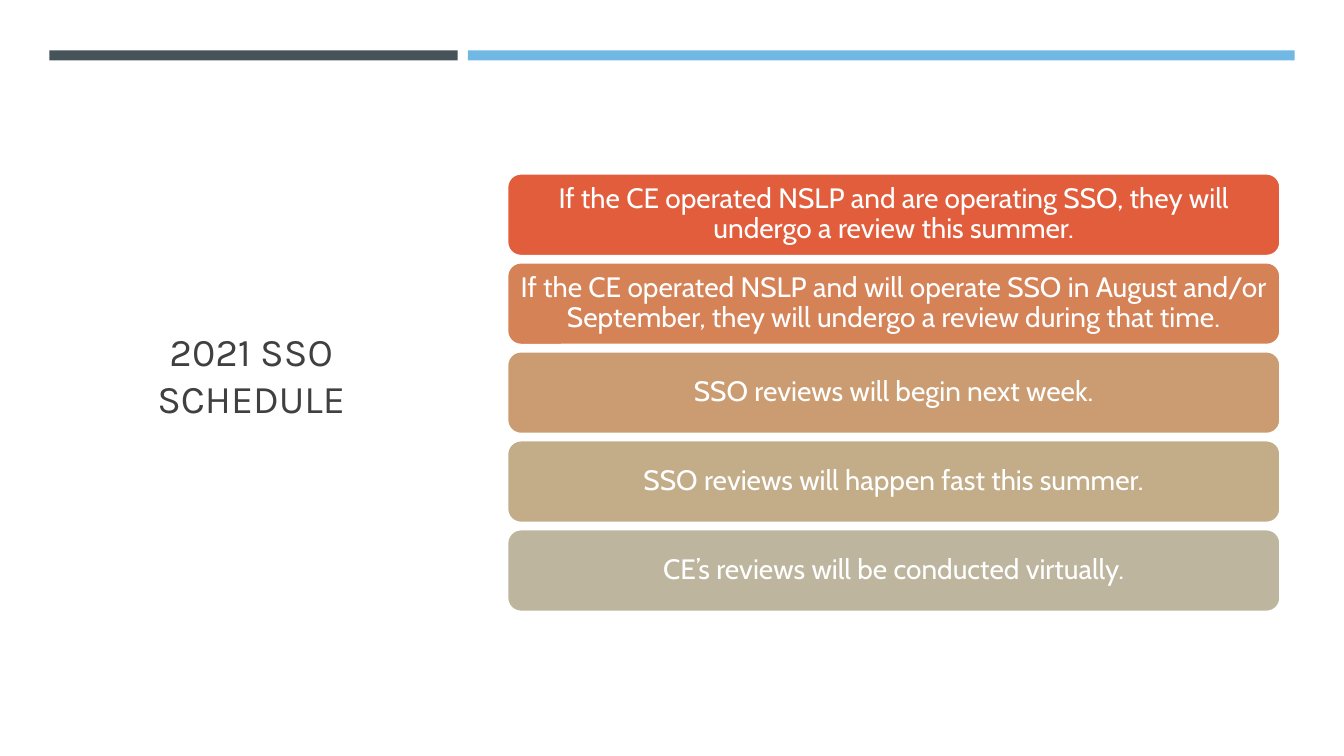
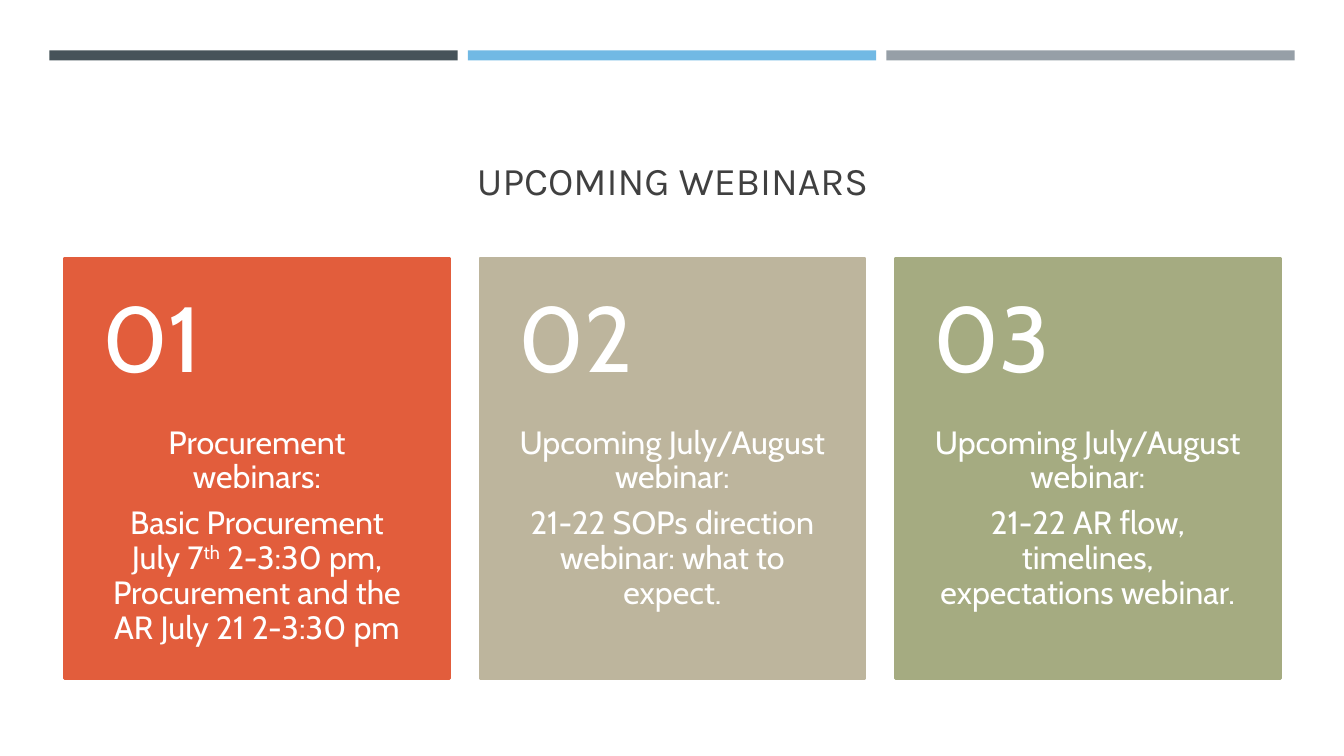
"""Build two slides: the 2021 SSO schedule and the upcoming webinars."""
from dataclasses import dataclass

from pptx import Presentation
from pptx.dml.color import RGBColor
from pptx.enum.shapes import MSO_SHAPE as SHAPE
from pptx.enum.text import MSO_ANCHOR as ANCHOR, MSO_AUTO_SIZE as AUTO, PP_ALIGN as ALIGN
from pptx.util import Inches, Pt


@dataclass(frozen=True)
class Theme:
    head_font: str = "Karla"
    body_font: str = "Cabin"
    title_size: int = 28
    pill_size: int = 20
    card_size: int = 23
    number_size: int = 66
    line_width: float = 1.75
    ink: str = "404040"
    white: str = "FFFFFF"
    slate: str = "465359"
    sky: str = "71B9E4"
    grey: str = "969FA7"
    red: str = "E25D3C"
    sand: str = "BDB59D"
    olive: str = "A5AB81"
    pills: tuple = ("E25D3C", "D68257", "CB9C71", "C3AC88", "BDB59D")


T = Theme()


def write(tf, *paras, font=T.body_font, size=T.pill_size, color=T.white, align=ALIGN.CENTER,
          anchor=ANCHOR.MIDDLE, insets=(0.1, 0.05, 0.1, 0.05), spacing=0.9, after=0.35):
    """Fill a text frame; text between carets is set as superscript."""
    tf.word_wrap, tf.auto_size, tf.vertical_anchor = True, AUTO.NONE, anchor
    tf.margin_left, tf.margin_top, tf.margin_right, tf.margin_bottom = map(Inches, insets)
    for i, text in enumerate(paras):
        p = tf.paragraphs[0] if i == 0 else tf.add_paragraph()
        p.alignment, p.line_spacing, p.space_after = align, spacing, Pt(round(size * after))
        for j, part in enumerate(text.split("^")):
            r = p.add_run()
            r.text = part
            r.font.name, r.font.size = font, Pt(size)
            r.font.color.rgb = RGBColor.from_string(color)
            if j % 2:
                r._r.get_or_add_rPr().set("baseline", "30000")


def add_box(s, kind, box, fill, line=None):
    """Add a flat filled shape with an optional outline."""
    sp = s.shapes.add_shape(kind, *map(Inches, box))
    sp.shadow.inherit = False
    sp.fill.solid()
    sp.fill.fore_color.rgb = RGBColor.from_string(fill)
    if line:
        sp.line.color.rgb = RGBColor.from_string(line)
        sp.line.width = Pt(T.line_width)
    else:
        sp.line.fill.background()
    return sp


prs = Presentation()
prs.slide_width, prs.slide_height = Inches(13.33), Inches(7.5)

frames = [
    ("2021 SSO SCHEDULE", (0.82, 1.14, 3.34, 5.15), ANCHOR.MIDDLE,
     [(T.slate, 4.05), (T.sky, 8.2)]),
    ("UPCOMING WEBINARS", (0.64, 0.77, 12.06, 1.3), ANCHOR.BOTTOM,
     [(T.slate, 4.05), (T.sky, 4.05), (T.grey, 4.05)]),
]
for title, box, anchor, bands in frames:
    s = prs.slides.add_slide(prs.slide_layouts.get_by_name("Title Only"))
    sp = s.shapes.title
    sp.left, sp.top, sp.width, sp.height = map(Inches, box)
    write(sp.text_frame, title, font=T.head_font, size=T.title_size, color=T.ink,
          anchor=anchor, spacing=1, after=0)
    left = 0.49
    for color, width in bands:
        add_box(s, SHAPE.RECTANGLE, (left, 0.5, width, 0.1), color)
        left += width + 0.1

schedule, webinars = prs.slides

steps = [
    "If the CE operated NSLP and are operating SSO, they will undergo a review this summer.",
    "If the CE operated NSLP and will operate SSO in August and/or September, "
    "they will undergo a review during that time.",
    "SSO reviews will begin next week.",
    "SSO reviews will happen fast this summer.",
    "CE’s reviews will be conducted virtually.",
]
pitch = (5.25 - 1.72) / (len(steps) - 1)
for i, (text, color) in enumerate(zip(steps, T.pills)):
    pill = add_box(schedule, SHAPE.ROUNDED_RECTANGLE, (5.03, 1.72 + i * pitch, 7.67, 0.82),
                   color, T.white)
    write(pill.text_frame, text, insets=(0.08,) * 4)

cards = [
    (T.red, "Procurement webinars:",
     "Basic Procurement July 7^th^ 2-3:30 pm, Procurement and the AR July 21 2-3:30 pm"),
    (T.sand, "Upcoming July/August webinar:", "21-22 SOPs direction webinar: what to expect."),
    (T.olive, "Upcoming July/August webinar:", "21-22 AR flow, timelines, expectations webinar."),
]
top, width, number_height, text_height = 2.56, 3.82, 1.67, 2.5
for i, (color, *paras) in enumerate(cards):
    left = 0.64 + i * (width + 0.3)
    add_box(webinars, SHAPE.RECTANGLE, (left, top, width, number_height + text_height),
            color, color)
    number = webinars.shapes.add_textbox(*map(Inches, (left, top, width, number_height)))
    write(number.text_frame, f"{i + 1:02}", size=T.number_size, align=ALIGN.LEFT,
          insets=(0.38, 0.18, 0.38, 0.18))
    body = webinars.shapes.add_textbox(
        *map(Inches, (left, top + number_height, width, text_height)))
    write(body.text_frame, *paras, size=T.card_size, anchor=ANCHOR.TOP,
          insets=(0.38, 0, 0.38, 0.36))

prs.save("out.pptx")
